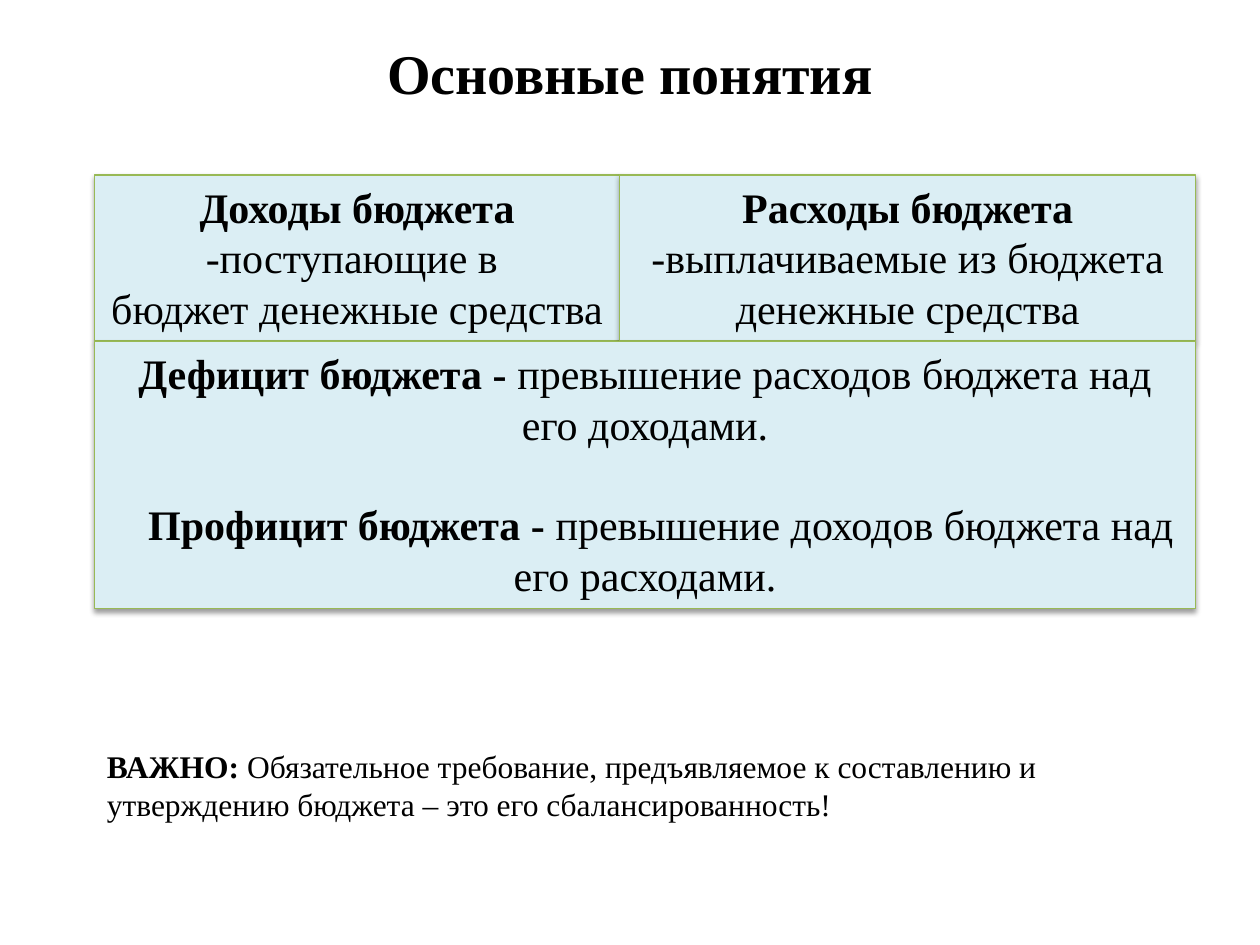
from lxml.etree import SubElement
from pptx import Presentation
from pptx.dml.color import RGBColor
from pptx.enum.shapes import MSO_SHAPE as Shape
from pptx.enum.text import MSO_ANCHOR as Anchor, PP_ALIGN as Align
from pptx.oxml.ns import qn
from pptx.util import Pt

FONT = "Times New Roman"
LEFT, WIDTH = 54, 629.3
CARD_TOP, CARD_HEIGHT, SPLIT = 100.1, 94.5, 300.2


def color(value):
    return RGBColor.from_string(value)


def write(para, text, size=24, bold=False, ink="000000"):
    span = para.add_run()
    span.text = text
    font = span.font
    font.name, font.size, font.bold = FONT, Pt(size), bold
    font.color.rgb = color(ink)


def place(shape, box):
    shape.left, shape.top, shape.width, shape.height = map(Pt, box)


def add_shadow(shape):
    shape.shadow.inherit = False
    effects = shape.element.spPr.find(qn("a:effectLst"))
    shadow = SubElement(effects, qn("a:outerShdw"), blurRad=str(Pt(3.1)),
                        dist=str(Pt(1.6)), dir="5400000", rotWithShape="0")
    tint = SubElement(shadow, qn("a:srgbClr"), val="000000")
    SubElement(tint, qn("a:alpha"), val="38000")


def add_title(page, box, text):
    title = page.shapes.title
    place(title, box)
    frame = title.text_frame
    frame.vertical_anchor = Anchor.MIDDLE
    frame.margin_bottom = Pt(54)
    para = frame.paragraphs[0]
    para.alignment = Align.CENTER
    write(para, text, size=32, bold=True)


def add_card(page, box, paragraphs):
    card = page.shapes.add_shape(Shape.RECTANGLE, *map(Pt, box))
    card.fill.solid()
    card.fill.fore_color.rgb = color("DBEEF4")
    card.line.color.rgb = color("98B955")
    card.line.width = Pt(0.75)
    add_shadow(card)
    frame = card.text_frame
    frame.word_wrap = True
    frame.vertical_anchor = Anchor.TOP
    for index, (term, meaning) in enumerate(paragraphs):
        para = frame.add_paragraph() if index else frame.paragraphs[0]
        para.alignment = Align.CENTER
        if term:
            write(para, term, bold=True)
        write(para, meaning)
    return frame


def add_definitions(page, box, paragraphs):
    last = add_card(page, box, paragraphs).paragraphs[-1]
    last.space_before = Pt(28.8)
    last._p.get_or_add_pPr().set("indent", str(Pt(18)))


def add_note(page, box, label, text):
    frame = page.shapes.add_textbox(*map(Pt, box)).text_frame
    frame.word_wrap = True
    para = frame.paragraphs[0]
    write(para, label, size=18, bold=True)
    write(para, text, size=18)


def main():
    deck = Presentation()
    deck.slide_width, deck.slide_height = Pt(720), Pt(540)
    page = deck.slides.add_slide(deck.slide_layouts[5])
    add_card(page, (LEFT, CARD_TOP, SPLIT, CARD_HEIGHT), [
        ("Доходы бюджета ", "-поступающие в "),
        ("", "бюджет денежные средства"),
    ])
    add_card(page, (LEFT + SPLIT, CARD_TOP, WIDTH - SPLIT, CARD_HEIGHT), [
        ("Расходы бюджета ", "-выплачиваемые из бюджета денежные средства"),
    ])
    add_definitions(page, (LEFT, CARD_TOP + CARD_HEIGHT + 0.5, WIDTH, 152.6), [
        ("Дефицит бюджета - ", "превышение расходов бюджета над его доходами."),
        ("Профицит бюджета - ", "превышение доходов бюджета над его расходами."),
    ])
    add_note(page, (LEFT, 423.4, WIDTH, 51), "ВАЖНО: ",
             "Обязательное требование, предъявляемое к составлению и "
             "утверждению бюджета – это его сбалансированность!")
    add_title(page, (36, 21.6, 648, 90), "Основные понятия")
    deck.save("out.pptx")


if __name__ == "__main__":
    main()
